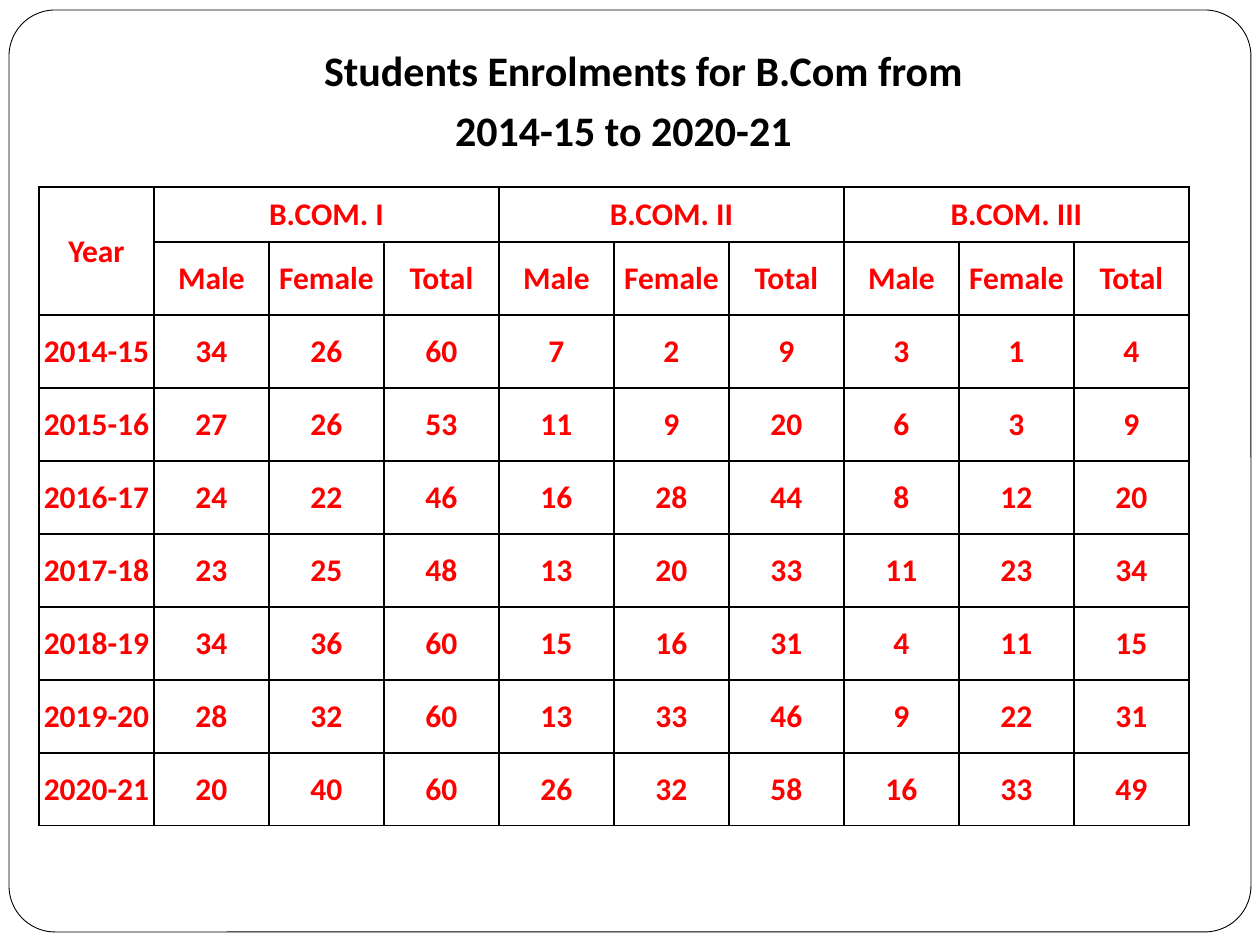
import pptx
import pptx.dml.color
import pptx.enum.shapes
import pptx.enum.text
import pptx.oxml.ns
import pptx.util
from dataclasses import dataclass
from lxml import etree

EMU_PER_PX = 914400 / 126


@dataclass(frozen=True)
class Theme:
    font: str = "Calibri"
    paper: str = "FFFFFF"
    ink: str = "000000"
    accent: str = "FF0000"
    title_size: int = 24
    cell_size: int = 18
    title_gap: float = 5.8
    frame_line: float = 0.5
    grid_line: int = 1


THEME = Theme()

TITLE = ["Students Enrolments for B.Com from", "2014-15 to 2020-21"]
COURSES = ["B.COM. I", "B.COM. II", "B.COM. III"]
MEASURES = ["Male", "Female", "Total"]
ENROLMENTS = [
    ("2014-15", 34, 26, 60, 7, 2, 9, 3, 1, 4),
    ("2015-16", 27, 26, 53, 11, 9, 20, 6, 3, 9),
    ("2016-17", 24, 22, 46, 16, 28, 44, 8, 12, 20),
    ("2017-18", 23, 25, 48, 13, 20, 33, 11, 23, 34),
    ("2018-19", 34, 36, 60, 15, 16, 31, 4, 11, 15),
    ("2019-20", 28, 32, 60, 13, 33, 46, 9, 22, 31),
    ("2020-21", 20, 40, 60, 26, 32, 58, 16, 33, 49),
]


def px(length):
    return pptx.util.Emu(round(length * EMU_PER_PX))


def rgb(color):
    return pptx.dml.color.RGBColor.from_string(color)


def write(paragraph, text, *, size, color, space_before=0, indent=0):
    """Write one centred bold line."""
    paragraph.alignment = pptx.enum.text.PP_ALIGN.CENTER
    paragraph.space_before = pptx.util.Pt(space_before)
    if indent:
        paragraph._p.get_or_add_pPr().set("marL", str(px(indent)))
    run = paragraph.add_run()
    run.text = text
    run.font.name = THEME.font
    run.font.size = pptx.util.Pt(size)
    run.font.bold = True
    run.font.color.rgb = rgb(color)


def add_frame(slide):
    frame = slide.shapes.add_shape(
        pptx.enum.shapes.MSO_SHAPE.ROUNDED_RECTANGLE, px(9), px(10), px(1242), px(922))
    frame.adjustments[0] = 0.05
    frame.shadow.inherit = False
    frame.fill.solid()
    frame.fill.fore_color.rgb = rgb(THEME.paper)
    frame.line.color.rgb = rgb(THEME.ink)
    frame.line.width = pptx.util.Pt(THEME.frame_line)


def add_title(slide):
    title = slide.shapes.add_textbox(px(88), px(39), px(1071), px(118)).text_frame
    title.word_wrap = True
    title.margin_top = px(5)
    # The first line sits slightly right of the second
    for number, (line, indent) in enumerate(zip(TITLE, (40, 0))):
        paragraph = title.add_paragraph() if number else title.paragraphs[0]
        write(paragraph, line, size=THEME.title_size, color=THEME.ink,
              space_before=THEME.title_gap, indent=indent)


def add_borders(cell):
    properties = cell._tc.get_or_add_tcPr()
    for side in ("a:lnL", "a:lnR", "a:lnT", "a:lnB"):
        border = etree.SubElement(properties, pptx.oxml.ns.qn(side),
                                  w=str(pptx.util.Pt(THEME.grid_line)))
        fill = etree.SubElement(border, pptx.oxml.ns.qn("a:solidFill"))
        etree.SubElement(fill, pptx.oxml.ns.qn("a:srgbClr"), val=THEME.ink)


def fill_cell(cell, value):
    add_borders(cell)
    cell.fill.background()
    cell.vertical_anchor = pptx.enum.text.MSO_ANCHOR.MIDDLE
    cell.margin_left = cell.margin_right = cell.margin_top = px(1)
    cell.margin_bottom = 0
    if value != "":
        write(cell.text_frame.paragraphs[0], str(value),
              size=THEME.cell_size, color=THEME.accent)


def add_enrolment_table(slide):
    group = len(MEASURES)
    course_row = ["Year"]
    for course in COURSES:
        course_row += [course] + [""] * (group - 1)
    rows = [course_row, [""] + MEASURES * len(COURSES), *ENROLMENTS]
    heights = [55] + [73] * (len(rows) - 1)
    column_width = 115

    table = slide.shapes.add_table(
        len(rows), len(course_row), px(39), px(187),
        px(column_width * len(course_row)), px(sum(heights))).table
    table.first_row = table.horz_banding = False
    for column in table.columns:
        column.width = px(column_width)

    for row_number, (values, height) in enumerate(zip(rows, heights)):
        table.rows[row_number].height = px(height)
        for column_number, value in enumerate(values):
            fill_cell(table.cell(row_number, column_number), value)

    # Merged headings: the year column and one per course
    table.cell(0, 0).merge(table.cell(1, 0))
    for first in range(1, len(course_row), group):
        table.cell(0, first).merge(table.cell(0, first + group - 1))


def main():
    presentation = pptx.Presentation()
    presentation.slide_width = px(1260)
    presentation.slide_height = px(945)
    slide = presentation.slides.add_slide(presentation.slide_layouts[6])
    add_frame(slide)
    add_title(slide)
    add_enrolment_table(slide)
    presentation.save("out.pptx")


if __name__ == "__main__":
    main()
